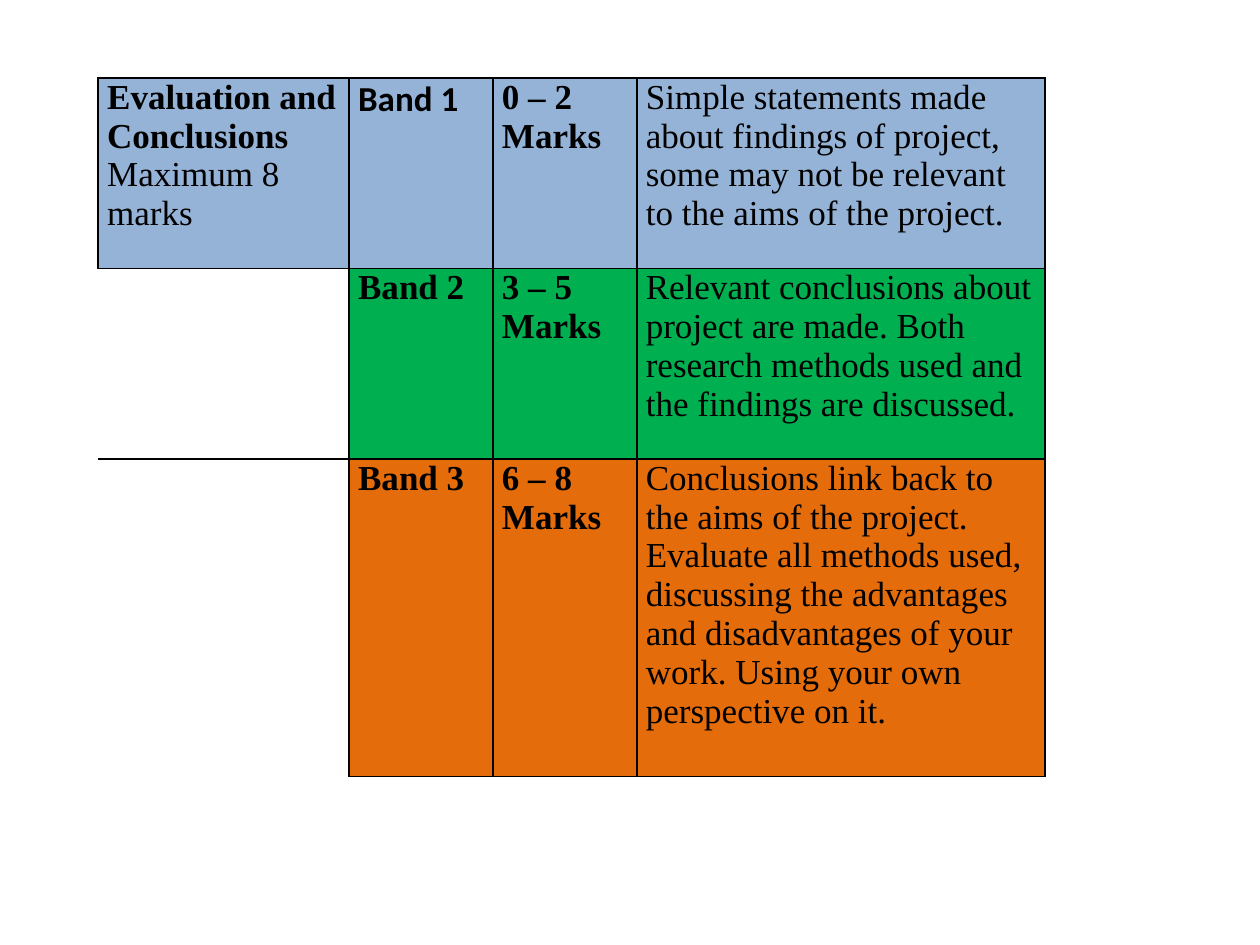
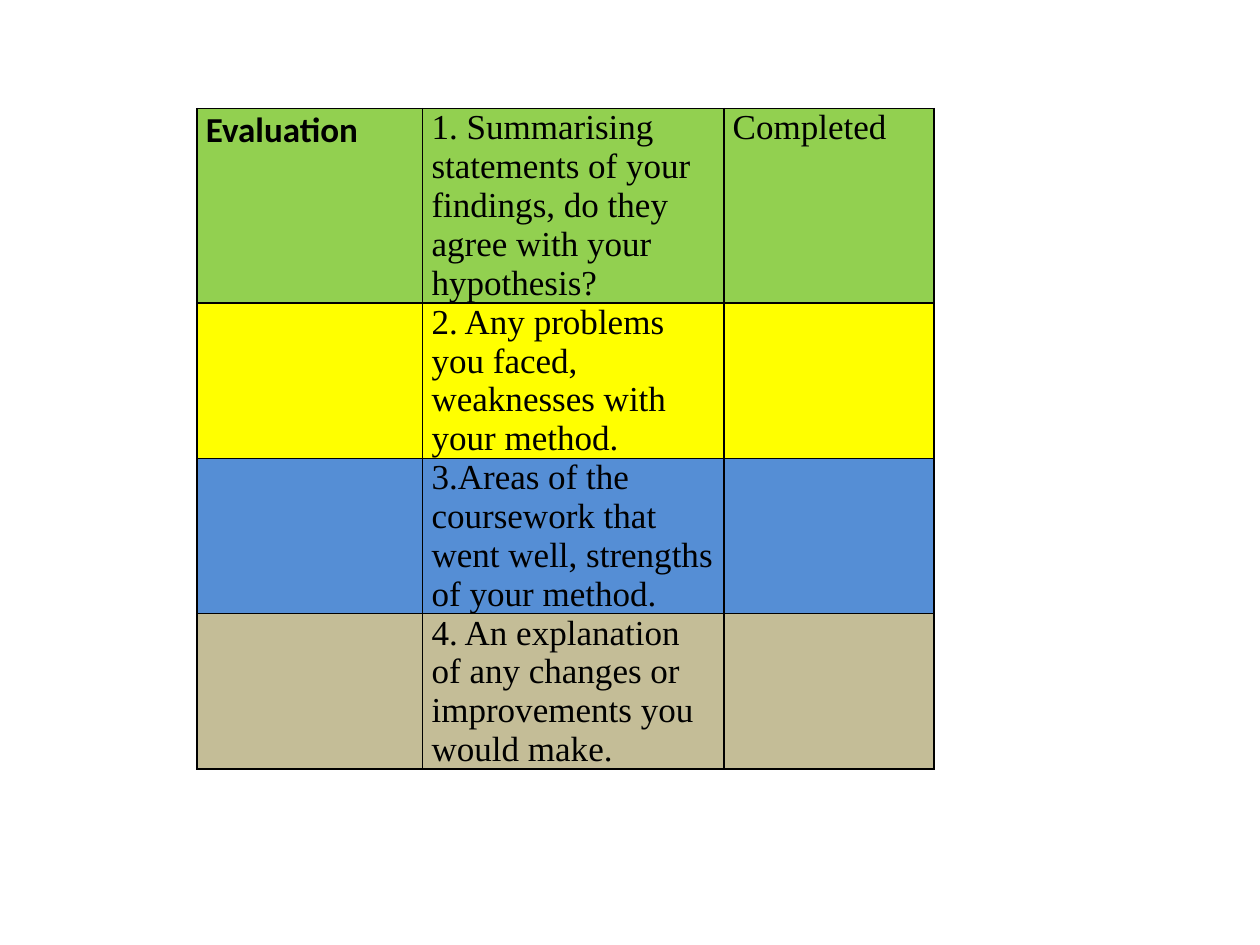
from lxml.etree import SubElement
from pptx import Presentation
from pptx.dml.color import RGBColor
from pptx.oxml.ns import qn
from pptx.util import Cm, Pt

SERIF = "Times New Roman"
SANS = "Calibri"
NO_GRID_STYLE = "{2D5ABB26-0587-4C30-8999-92F81FD0307C}"

BLACK = RGBColor(0x00, 0x00, 0x00)
PALE_BLUE = RGBColor(0x95, 0xB3, 0xD7)
GREEN = RGBColor(0x00, 0xB0, 0x50)
ORANGE = RGBColor(0xE4, 0x6C, 0x0A)
LIME = RGBColor(0x92, 0xD0, 0x50)
YELLOW = RGBColor(0xFF, 0xFF, 0x00)
BLUE = RGBColor(0x55, 0x8E, 0xD5)
TAN = RGBColor(0xC4, 0xBD, 0x97)

CELL_MARGINS = {"margin_left": Cm(0.18), "margin_right": Cm(0.18),
                "margin_top": 0, "margin_bottom": 0}


def plain(text):
    """Return one paragraph of regular text."""
    return text, {"name": SERIF, "bold": False}


def strong(text, font=SERIF):
    """Return one paragraph of bold text."""
    return text, {"name": font, "bold": True}


def apply_format(obj, values):
    """Set each attribute of obj from a dict."""
    for name, value in values.items():
        setattr(obj, name, value)


def add_borders(cell, sides):
    """Draw thin black lines on the given sides of a cell."""
    tc_pr = cell._tc.get_or_add_tcPr()
    for side in sides:
        ln = SubElement(tc_pr, qn(f"a:ln{side}"), w=str(Pt(1)))
        SubElement(SubElement(ln, qn("a:solidFill")), qn("a:srgbClr"), val=str(BLACK))


def write_cell(cell, paragraphs):
    """Fill a cell with formatted paragraphs."""
    apply_format(cell, CELL_MARGINS)
    tf = cell.text_frame
    for i, (text, font) in enumerate(paragraphs):
        p = tf.paragraphs[0] if i == 0 else tf.add_paragraph()
        r = p.add_run()
        r.text = text
        apply_format(r.font, {"size": Pt(20), **font})
        r.font.color.rgb = BLACK


def add_grid(prs, left, top, widths, heights, colors, rows):
    """Add a slide with a table; a None cell stays open, without fill."""
    s = prs.slides.add_slide(prs.slide_layouts[6])
    frame = s.shapes.add_table(len(rows), len(widths), Cm(left), Cm(top),
                               Cm(sum(widths)), Cm(sum(heights)))
    table = frame.table
    apply_format(table, {"first_row": False, "horz_banding": False})
    table._tbl.tblPr.find(qn("a:tableStyleId")).text = NO_GRID_STYLE
    for column, width in zip(table.columns, widths):
        column.width = Cm(width)
    for row, height in zip(table.rows, heights):
        row.height = Cm(height)
    for i, (color, row) in enumerate(zip(colors, rows)):
        for j, paragraphs in enumerate(row):
            cell = table.cell(i, j)
            if paragraphs is None:
                add_borders(cell, "R" if rows[i - 1][j] is None else "RT")
                continue
            add_borders(cell, "LRTB")
            cell.fill.solid()
            cell.fill.fore_color.rgb = color
            write_cell(cell, paragraphs)


def band_row(heading, band, marks, description, font=SERIF):
    """Return the cells of one mark band."""
    return [heading, [strong(band, font)], [strong(marks), strong("Marks")],
            [plain(description)]]


def add_mark_bands(prs):
    """Add the slide with the mark bands."""
    heading = [strong("Evaluation and Conclusions"), plain("Maximum 8 marks")]
    rows = [
        band_row(heading, "Band 1", "0 – 2",
                 "Simple statements made about findings of project, some may "
                 "not be relevant to the aims of the project.", SANS),
        band_row(None, "Band 2", "3 – 5",
                 "Relevant conclusions about project are made. Both research "
                 "methods used and the findings are discussed."),
        band_row(None, "Band 3", "6 – 8",
                 "Conclusions link back to the aims of the project. Evaluate "
                 "all methods used, discussing the advantages and disadvantages "
                 "of your work. Using your own perspective on it."),
    ]
    add_grid(prs, 1.98, 1.57, [5.06, 2.9, 2.9, 8.23], [3.84, 3.84, 6.4],
             [PALE_BLUE, GREEN, ORANGE], rows)


def add_checklist(prs):
    """Add the slide with the evaluation checklist."""
    tasks = [
        "1. Summarising statements of your findings, do they agree with your hypothesis?",
        "2. Any problems you faced, weaknesses with your method.",
        "3.Areas of the coursework that went well, strengths of your method.",
        "4. An explanation of any changes or improvements you would make.",
    ]
    rows = [[[], [plain(task)], []] for task in tasks]
    rows[0][0] = [strong("Evaluation", SANS)]
    rows[0][2] = [plain("Completed")]
    add_grid(prs, 3.97, 2.19, [4.55, 6.07, 4.24], [3.91] + [2.92] * 3,
             [LIME, YELLOW, BLUE, TAN], rows)


def main():
    """Build and save the presentation."""
    prs = Presentation()
    apply_format(prs, {"slide_width": Cm(25.4), "slide_height": Cm(19.05)})
    add_mark_bands(prs)
    add_checklist(prs)
    prs.save("out.pptx")


if __name__ == "__main__":
    main()
